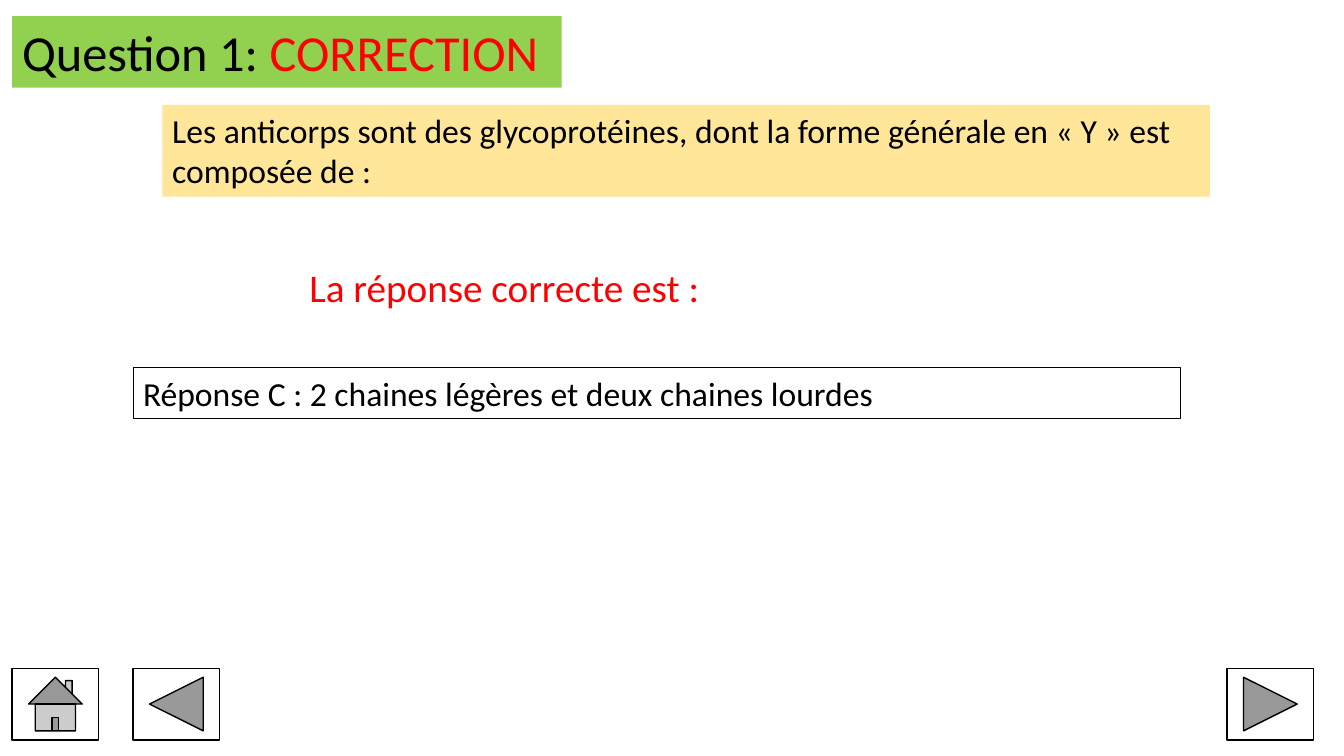
"""Build the correction slide for question 1 of an antibody quiz."""
import pptx
import pptx.dml.color
import pptx.enum.shapes
import pptx.enum.text
import pptx.util

SHAPES = pptx.enum.shapes.MSO_SHAPE
WIDTH, HEIGHT = 13.33, 7.5
FONT = "Calibri"
COLORS = {"black": "000000", "red": "FF0000", "white": "FFFFFF",
          "green": "92D050", "sand": "FFE699"}

PANELS = [
    {"at": (0.12, 0.16, 5.45, 0.71), "fill": "green", "line": None, "size": 36,
     "spans": [("Question 1: ", "black"), ("CORRECTION", "red")]},
    {"at": (1.61, 1.04, 10.39, 0.91), "fill": "sand", "line": None, "size": 24,
     "spans": [("Les anticorps sont des glycoprotéines, dont la forme générale "
                "en « Y » est composée de :", "black")]},
    {"at": (1.32, 3.65, 10.39, 0.5), "fill": None, "line": "black", "size": 24,
     "spans": [("Réponse C : 2 chaines légères et deux chaines lourdes", "black")]},
    {"at": (2.97, 2.56, 6.72, 0.57), "fill": None, "line": None, "size": 28,
     "spans": [("La réponse correcte est :", "red")]},
]

BUTTON_TOP, BUTTON_WIDTH, BUTTON_HEIGHT = 6.63, 0.86, 0.71
BUTTONS = [
    (SHAPES.ACTION_BUTTON_HOME, 0.12),
    (SHAPES.ACTION_BUTTON_BACK_OR_PREVIOUS, 1.32),
    (SHAPES.ACTION_BUTTON_FORWARD_OR_NEXT, 12.17),
]


def rgb(name):
    """Return the named colour."""
    return pptx.dml.color.RGBColor.from_string(COLORS[name])


def add_box(page, kind, at, fill, line, line_width):
    """Add a preset shape with plain fill and outline."""
    box = page.shapes.add_shape(kind, *map(pptx.util.Inches, at))
    box.shadow.inherit = False
    if fill:
        box.fill.solid()
        box.fill.fore_color.rgb = rgb(fill)
    else:
        box.fill.background()
    if line:
        box.line.color.rgb = rgb(line)
        box.line.width = pptx.util.Pt(line_width)
    else:
        box.line.fill.background()
    return box


def write(box, spans, size):
    """Write coloured spans, left aligned, from the top of a box."""
    frame = box.text_frame
    frame.word_wrap = True
    frame.auto_size = pptx.enum.text.MSO_AUTO_SIZE.SHAPE_TO_FIT_TEXT
    frame.vertical_anchor = pptx.enum.text.MSO_ANCHOR.TOP
    para = frame.paragraphs[0]
    para.alignment = pptx.enum.text.PP_ALIGN.LEFT
    for text, color in spans:
        span = para.add_run()
        span.text = text
        span.font.name = FONT
        span.font.size = pptx.util.Pt(size)
        span.font.color.rgb = rgb(color)


def main():
    """Assemble and save the deck."""
    deck = pptx.Presentation()
    deck.slide_width = pptx.util.Inches(WIDTH)
    deck.slide_height = pptx.util.Inches(HEIGHT)
    page = deck.slides.add_slide(deck.slide_layouts[6])
    for panel in PANELS:
        if panel["fill"] or panel["line"]:
            box = add_box(page, SHAPES.RECTANGLE, panel["at"],
                          panel["fill"], panel["line"], 0.75)
        else:
            box = page.shapes.add_textbox(*map(pptx.util.Inches, panel["at"]))
        write(box, panel["spans"], panel["size"])
    for kind, left in BUTTONS:
        add_box(page, kind, (left, BUTTON_TOP, BUTTON_WIDTH, BUTTON_HEIGHT),
                "white", "black", 1)
    deck.save("out.pptx")


if __name__ == "__main__":
    main()
